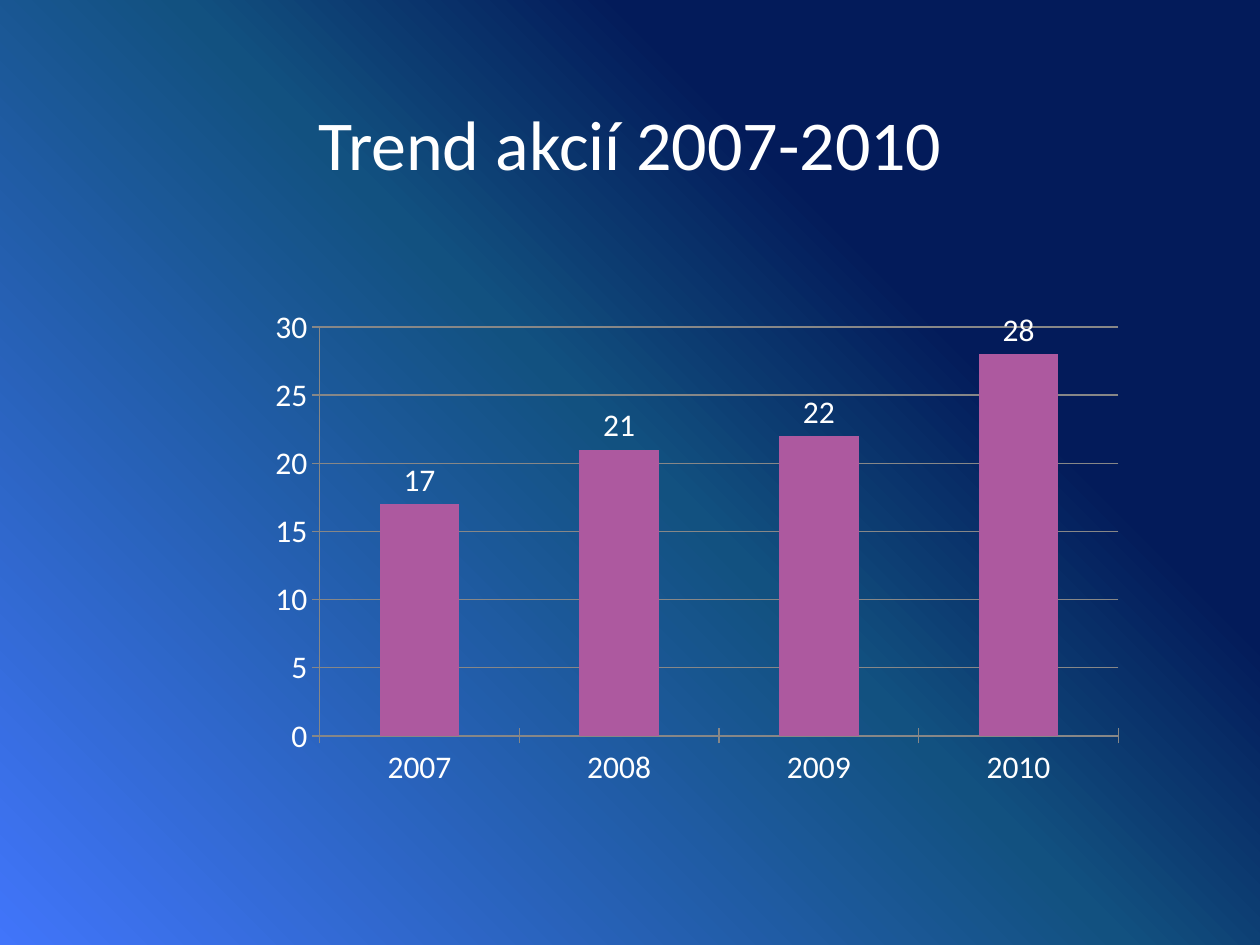
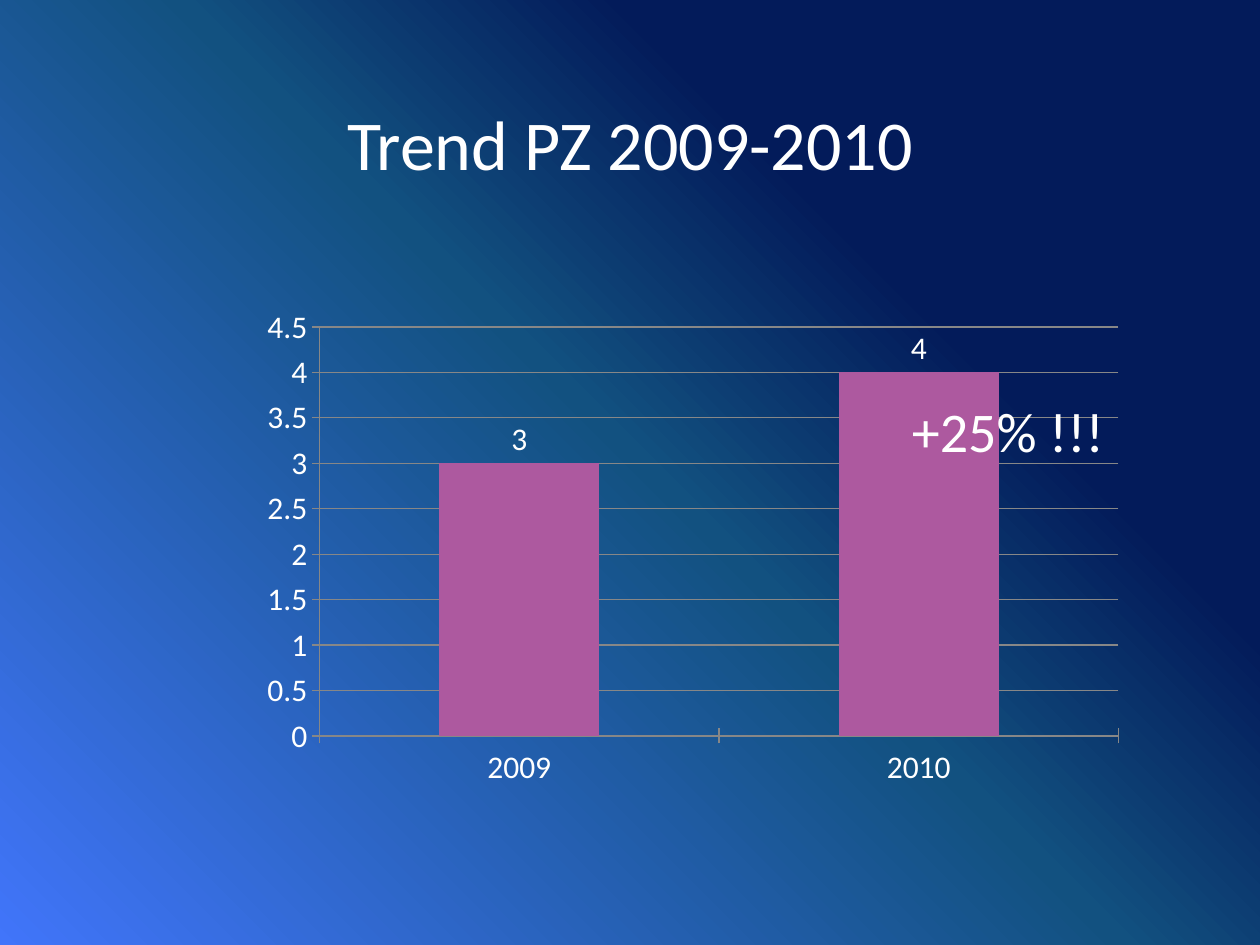
from pptx import Presentation
from pptx.chart.data import CategoryChartData
from pptx.dml.color import RGBColor
from pptx.enum.chart import (XL_CHART_TYPE, XL_LABEL_POSITION,
                             XL_TICK_LABEL_POSITION, XL_TICK_MARK)
from pptx.enum.text import MSO_ANCHOR, MSO_AUTO_SIZE, PP_ALIGN
from pptx.oxml import parse_xml
from pptx.oxml.ns import nsdecls, qn
from pptx.util import Pt

COLUMN = XL_CHART_TYPE.COLUMN_CLUSTERED
ABOVE = XL_LABEL_POSITION.OUTSIDE_END
LOW = XL_TICK_LABEL_POSITION.LOW
CROSS = XL_TICK_MARK.CROSS
MIDDLE = MSO_ANCHOR.MIDDLE
GROW = MSO_AUTO_SIZE.SHAPE_TO_FIT_TEXT
CENTER = PP_ALIGN.CENTER

WHITE = RGBColor(0xFF, 0xFF, 0xFF)
GRAY = RGBColor(0x87, 0x87, 0x87)
PLUM = RGBColor(0xAD, 0x59, 0x9F)
NAVY = RGBColor(0x03, 0x1B, 0x5A)
TEAL = RGBColor(0x12, 0x51, 0x80)
BLUE = RGBColor(0x41, 0x75, 0xFA)
STOPS = [(29, NAVY), (49, TEAL), (100, BLUE)]
ANGLE = 135
FONT = "Calibri"
PLOT = {"x": 0.09, "y": 0.04, "w": 0.91, "h": 0.82}


class Deck:
    def __init__(self):
        self.prs = Presentation()
        self.prs.slide_width = Pt(720)
        self.prs.slide_height = Pt(540)
        self.slide = None
        self.backdrop()

    def backdrop(self):
        master = self.prs.slide_master
        master.background.fill.gradient()
        old = master.element.find(".//" + qn("p:bgPr")).find(qn("a:gradFill"))
        stops = "".join(
            f'<a:gs pos="{at * 1000}"><a:srgbClr val="{color}"/></a:gs>'
            for at, color in STOPS)
        new = parse_xml(
            f'<a:gradFill {nsdecls("a")} rotWithShape="1"><a:gsLst>{stops}</a:gsLst>'
            f'<a:lin ang="{ANGLE * 60000}" scaled="0"/></a:gradFill>')
        old.getparent().replace(old, new)

    def style(self, font, size):
        font.name = FONT
        font.size = Pt(size)
        font.color.rgb = WHITE

    def label(self, para, text, size):
        run = para.add_run()
        run.text = text
        self.style(run.font, size)

    def page(self, title):
        self.slide = self.prs.slides.add_slide(self.prs.slide_layouts[5])
        head = self.slide.shapes.title
        head.left, head.top = Pt(54), Pt(23.75)
        head.width, head.height = Pt(612), Pt(115)
        head.text_frame.vertical_anchor = MIDDLE
        para = head.text_frame.paragraphs[0]
        para.alignment = CENTER
        self.label(para, title, 40)

    def bars(self, years, counts):
        data = CategoryChartData()
        data.categories = years
        data.add_series("Series 1", counts)
        chart = self.slide.shapes.add_chart(
            COLUMN, Pt(137.5), Pt(175.5), Pt(502), Pt(285), data).chart
        chart.has_legend = False
        chart.has_title = False
        self.style(chart.font, 18)
        plot = chart.plots[0]
        plot.gap_width = 150
        plot.vary_by_categories = False
        fill = plot.series[0].format.fill
        fill.solid()
        fill.fore_color.rgb = PLUM
        plot.has_data_labels = True
        labels = plot.data_labels
        labels.show_value = True
        labels.position = ABOVE
        self.style(labels.font, 18)
        for axis in (chart.category_axis, chart.value_axis):
            axis.major_tick_mark = CROSS
            self.stroke(axis.format.line)
            self.style(axis.tick_labels.font, 18)
        chart.category_axis.tick_label_position = LOW
        chart.value_axis.has_major_gridlines = True
        self.stroke(chart.value_axis.major_gridlines.format.line)
        self.place(chart)

    def stroke(self, line):
        line.color.rgb = GRAY
        line.width = Pt(0.75)

    def place(self, chart):
        area = chart.element.find(".//" + qn("c:plotArea"))
        for old in area.findall(qn("c:layout")):
            area.remove(old)
        modes = "".join(f'<c:{key}Mode val="edge"/>' for key in "xy")
        sizes = "".join(f'<c:{key} val="{val}"/>' for key, val in PLOT.items())
        area.insert(0, parse_xml(
            f'<c:layout {nsdecls("c")}><c:manualLayout>'
            f'<c:layoutTarget val="inner"/>{modes}{sizes}'
            f'</c:manualLayout></c:layout>'))

    def note(self, text, left, top, width, height):
        box = self.slide.shapes.add_textbox(
            Pt(left), Pt(top), Pt(width), Pt(height))
        frame = box.text_frame
        frame.word_wrap = False
        frame.auto_size = GROW
        self.label(frame.paragraphs[0], text, 32)


def main():
    deck = Deck()
    deck.page("Trend akcií 2007-2010")
    deck.bars(["2007", "2008", "2009", "2010"], [17, 21, 22, 28])
    deck.page("Trend PZ 2009-2010")
    deck.bars(["2009", "2010"], [3, 4])
    deck.note("+25% !!!", 514, 223, 125, 46)
    deck.prs.save("out.pptx")


if __name__ == "__main__":
    main()
